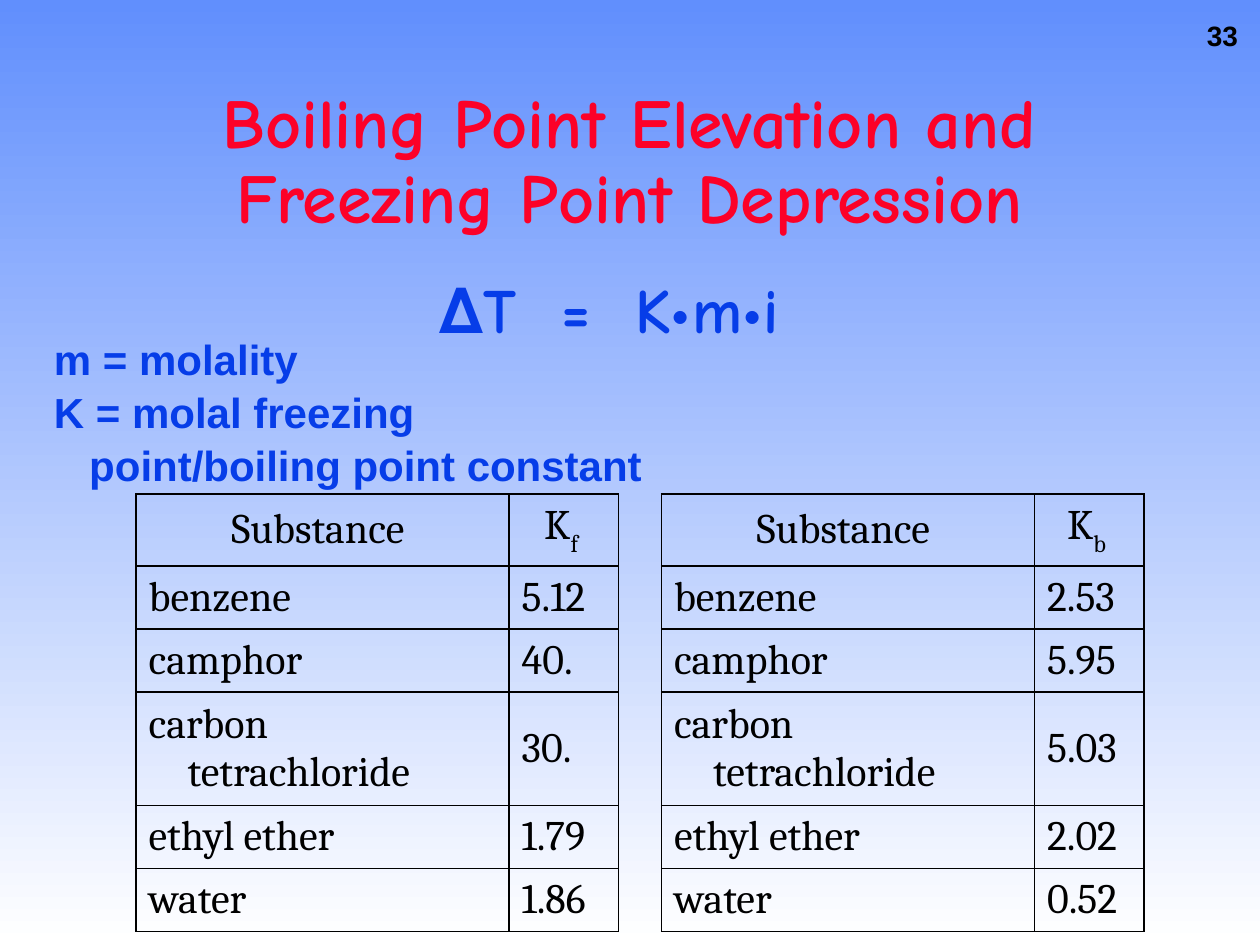
from lxml import etree
from pptx import Presentation
from pptx import util as u
from pptx.dml.color import RGBColor
from pptx.enum import text as t
from pptx.oxml import ns

HUE = {"sky": "618FFD", "white": "FFFFFF", "red": "FC0128", "blue": "063DE8", "black": "000000"}
WIDE, TALL = 10, 7.5
HANG = 0.31
NAMES = ["benzene", "camphor", "carbon tetrachloride", "ethyl ether", "water"]
FREEZE = ["5.12", "40.", "30.", "1.79", "1.86"]
BOIL = ["2.53", "5.95", "5.03", "2.02", "0.52"]


def tint(key):
    """Return the named colour."""
    return RGBColor.from_string(HUE[key])


def add_run(para, words, size, face, key, bold=False):
    """Append one formatted run and return it."""
    run = para.add_run()
    run.text = words
    font = run.font
    font.size, font.name, font.bold = u.Pt(size), face, bold
    font.color.rgb = tint(key)
    return run


def indent(para, left, first=0):
    """Set the left margin and first-line indent in inches."""
    props = para._p.get_or_add_pPr()
    props.set("marL", str(u.Inches(left)))
    props.set("indent", str(u.Inches(first)))


def add_box(slide, box, wrap=True):
    """Add a text box and return its frame."""
    frame = slide.shapes.add_textbox(*map(u.Inches, box)).text_frame
    frame.word_wrap = wrap
    return frame


def paint(slide):
    """Fill the background from sky to white."""
    fill = slide.background.fill
    fill.gradient()
    fill.gradient_angle = 270
    for stop, key in zip(fill.gradient_stops, ("sky", "white")):
        stop.color.rgb = tint(key)


def add_title(slide, box):
    """Place and format the title."""
    title = slide.shapes.title
    title.left, title.top, title.width, title.height = map(u.Inches, box)
    frame = title.text_frame
    frame.vertical_anchor = t.MSO_ANCHOR.MIDDLE
    frame.auto_size = t.MSO_AUTO_SIZE.NONE
    para = frame.paragraphs[0]
    para.alignment, para.line_spacing = t.PP_ALIGN.CENTER, 0.9
    add_run(para, "Boiling Point Elevation and Freezing Point Depression",
            40, "Comic Neue", "red", True)


def add_law(slide, box):
    """Write the formula."""
    para = add_box(slide, box).paragraphs[0]
    para.line_spacing = 0.9
    add_run(para, "∆T  =  K•m•i", 36, "Comic Neue", "blue", True)


def add_key(slide, box):
    """Explain the symbols of the formula."""
    frame = add_box(slide, box)
    lines = [("m = molality", 0), ("K = molal freezing", 0),
             ("point/boiling point constant", 0.28)]
    for i, (words, left) in enumerate(lines):
        para = frame.add_paragraph() if i else frame.paragraphs[0]
        para.line_spacing = 1.05
        indent(para, left)
        add_run(para, words, 24, "Arial", "blue", True)


def rule(cell):
    """Draw thin black borders round a cell."""
    props = cell._tc.get_or_add_tcPr()
    for i, side in enumerate(("lnL", "lnR", "lnT", "lnB")):
        line = etree.Element(ns.qn(f"a:{side}"), w=str(u.Pt(1)))
        fill = etree.SubElement(line, ns.qn("a:solidFill"))
        etree.SubElement(fill, ns.qn("a:srgbClr"), val=HUE["black"])
        props.insert(i, line)


def add_cell(cell, words, sub="", head=False):
    """Write one table cell, with an optional subscript."""
    cell.fill.background()
    cell.vertical_anchor = t.MSO_ANCHOR.MIDDLE
    rule(cell)
    para = cell.text_frame.paragraphs[0]
    indent(para, HANG, -HANG)
    if head:
        para.alignment = t.PP_ALIGN.CENTER
    add_run(para, words, 24, "Cambria", "black")
    if sub:
        low = add_run(para, sub, 24, "Cambria", "black")
        low.font._element.set("baseline", "-30000")


def add_grid(slide, box, sub, vals, row):
    """Build one table of constants with the given row height."""
    left, top, width = box
    highs = [row + 0.07, row, row, row + 0.39, row, row]
    table = slide.shapes.add_table(len(highs), 2, *map(u.Inches, (left, top, width, sum(highs)))).table
    table.first_row = table.horz_banding = False
    for col, share in zip(table.columns, (0.773, 0.227)):
        col.width = u.Inches(width * share)
    for line, high in zip(table.rows, highs):
        line.height = u.Inches(high)
    add_cell(table.cell(0, 0), "Substance ", head=True)
    add_cell(table.cell(0, 1), "K", sub + " ", head=True)
    for i, pair in enumerate(zip(NAMES, vals), 1):
        for j, words in enumerate(pair):
            add_cell(table.cell(i, j), words)


def add_page(slide, box):
    """Write the page number."""
    para = add_box(slide, box, False).paragraphs[0]
    add_run(para, "33", 16, "Arial", "black", True)


def main():
    """Build the slide and save it."""
    deck = Presentation()
    deck.slide_width, deck.slide_height = u.Inches(WIDE), u.Inches(TALL)
    slide = deck.slides.add_slide(deck.slide_layouts[5])
    paint(slide)
    add_page(slide, (9.48, 0.1, 0.47, 0.36))
    add_title(slide, (1.08, 0.67, 7.83, 1.25))
    add_law(slide, (3.39, 2.17, 6.02, 0.5))
    add_key(slide, (0.33, 2.58, 4.99, 1.3))
    add_grid(slide, (1.08, 3.92, 3.83), "f", FREEZE, 0.5)
    add_grid(slide, (5.25, 3.92, 3.83), "b", BOIL, 0.48)
    deck.save("out.pptx")


if __name__ == "__main__":
    main()
